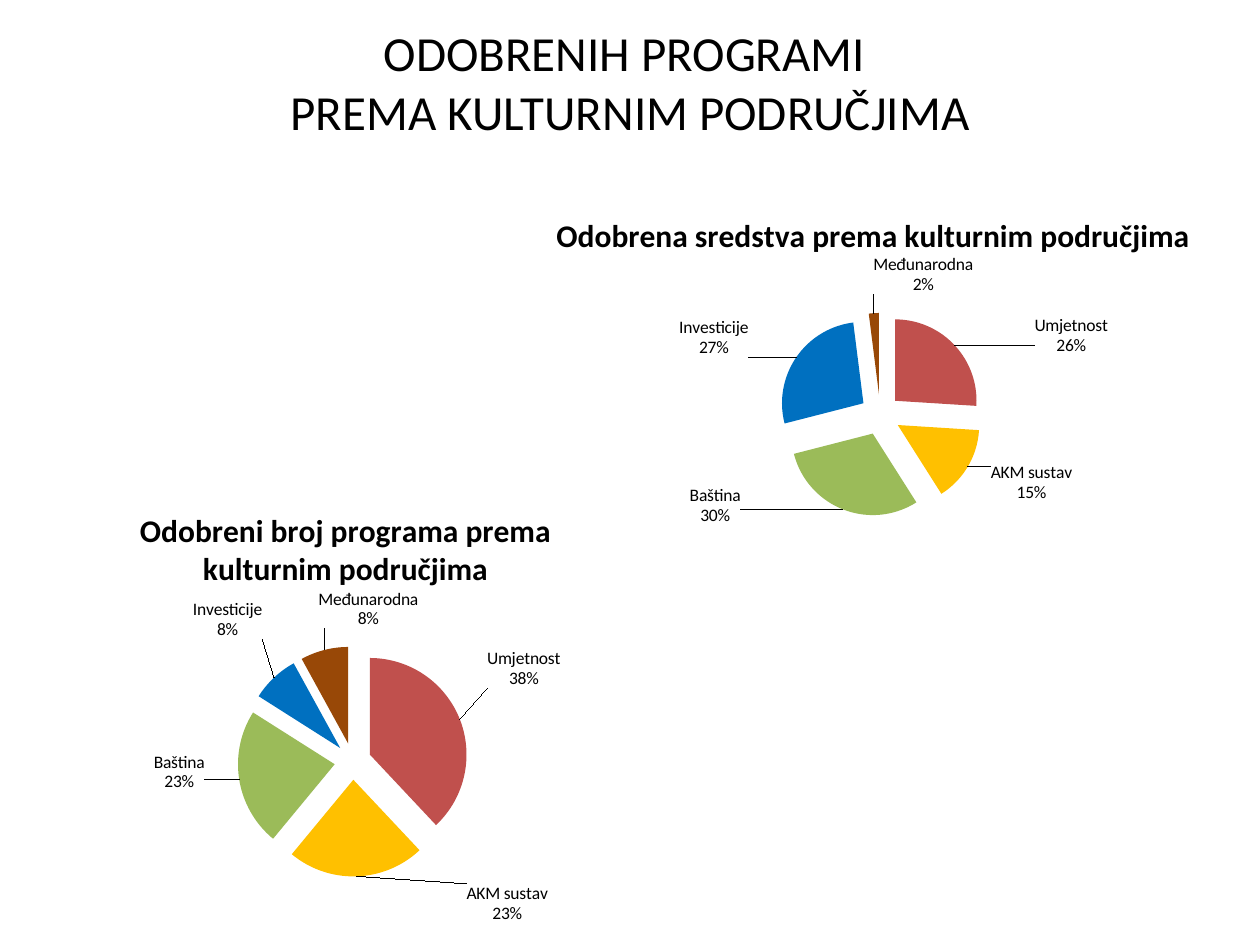
import pptx
import pptx.chart.data
import pptx.dml.color
import pptx.enum.chart
import pptx.enum.text
import pptx.oxml
import pptx.oxml.ns
import pptx.util

RGBColor = pptx.dml.color.RGBColor
BLACK = RGBColor(0x00, 0x00, 0x00)
RED = RGBColor(0xC0, 0x50, 0x4D)
YELLOW = RGBColor(0xFF, 0xC0, 0x00)
GREEN = RGBColor(0x9B, 0xBB, 0x59)
BLUE = RGBColor(0x00, 0x70, 0xC0)
BROWN = RGBColor(0x98, 0x48, 0x07)
FONT = "Calibri"
NAMESPACE = pptx.oxml.ns.nsdecls("c")

AREAS = {"Umjetnost": RED, "AKM sustav": YELLOW, "Baština": GREEN,
         "Investicije": BLUE, "Međunarodna": BROWN}

# Frames are shares of the slide; plots, titles and label shifts are shares of the chart
CHARTS = [
    {"title": "Odobrena sredstva prema kulturnim područjima",
     "frame": (0.358, 0.196, 0.659, 0.399), "plot": (0.168, 0.339, 0.698, 0.54),
     "title_at": (0.12, 0.06), "explosion": 25, "values": (26, 15, 30, 27, 2),
     "shifts": [(0.09, 0.04), (0.02, -0.02), (-0.12, -0.08), (-0.05, 0.01), (0.06, -0.03)]},
    {"title": "Odobreni broj programa prema kulturnim područjima",
     "frame": (-0.002, 0.507, 0.543, 0.499), "plot": (0.226, 0.355, 0.587, 0.488),
     "title_at": (0.2, 0.05), "explosion": 19, "values": (38, 23, 23, 8, 8),
     "shifts": [(0.03, -0.06), (0.22, 0), (-0.04, -0.06), (-0.01, -0.07), (0.14, -0.03)]},
]


def layout_xml(position, edge=True, inner=False):
    """Manual chart layout: x, y and optionally width, height."""
    target = '<c:layoutTarget val="inner"/>' if inner else ""
    modes = '<c:xMode val="edge"/><c:yMode val="edge"/>' if edge else ""
    values = "".join(f'<c:{name} val="{value}"/>' for name, value in zip("xywh", position))
    return (f"<c:layout {NAMESPACE}><c:manualLayout>{target}{modes}{values}"
            "</c:manualLayout></c:layout>")


def style_font(font, size, bold=False):
    font.name = FONT
    font.size = pptx.util.Pt(size)
    font.bold = bold
    font.color.rgb = BLACK


presentation = pptx.Presentation()
presentation.slide_width = pptx.util.Inches(10)
presentation.slide_height = pptx.util.Inches(7.5)
width, height = presentation.slide_width, presentation.slide_height
slide = presentation.slides.add_slide(presentation.slide_layouts[6])

# Heading
heading = slide.shapes.add_textbox(0, int(height * 0.017), width, int(height * 0.139))
heading.text_frame.word_wrap = True
heading.text_frame.text = "ODOBRENIH PROGRAMI \nPREMA KULTURNIM PODRUČJIMA"
for paragraph in heading.text_frame.paragraphs:
    paragraph.alignment = pptx.enum.text.PP_ALIGN.CENTER
    style_font(paragraph.runs[0].font, 28)

# Two exploded pies
for details in CHARTS:
    data = pptx.chart.data.CategoryChartData()
    data.categories = list(AREAS)
    data.add_series("Series 1", details["values"])
    frame = [int(share * side) for share, side in zip(details["frame"], (width, height) * 2)]
    chart = slide.shapes.add_chart(pptx.enum.chart.XL_CHART_TYPE.PIE, *frame, data).chart
    style_font(chart.font, 10)
    chart.has_legend = False

    # Title
    chart.has_title = True
    title_frame = chart.chart_title.text_frame
    title_frame.text = details["title"]
    style_font(title_frame.paragraphs[0].runs[0].font, 18, bold=True)
    title = chart.chart_title._element
    for layout in title.xpath("c:layout"):
        title.remove(layout)
    title.xpath("c:tx")[0].addnext(pptx.oxml.parse_xml(layout_xml(details["title_at"])))

    # Plot area
    plot_area = chart._chartSpace.xpath("c:chart/c:plotArea")[0]
    for layout in plot_area.xpath("c:layout"):
        plot_area.remove(layout)
    plot_area.insert(0, pptx.oxml.parse_xml(layout_xml(details["plot"], inner=True)))

    # Slices
    plot = chart.plots[0]
    plot.vary_by_categories = True
    series = plot.series[0]
    explosion = f'<c:explosion {NAMESPACE} val="{details["explosion"]}"/>'
    for index, color in enumerate(AREAS.values()):
        fill = series.points[index].format.fill
        fill.solid()
        fill.fore_color.rgb = color
    for point in series._element.xpath("c:dPt"):
        point.xpath("c:spPr")[0].addprevious(pptx.oxml.parse_xml(explosion))
    series._element.xpath("c:dPt")[0].addprevious(pptx.oxml.parse_xml(explosion))

    # Labels, each moved away from its slice
    labels = series.data_labels
    style_font(labels.font, 10)
    labels.show_value = False
    labels.show_category_name = True
    labels.show_percentage = True
    labels.number_format = "0%"
    labels.number_format_is_linked = False
    labels.position = pptx.enum.chart.XL_LABEL_POSITION.OUTSIDE_END
    for index, shift in enumerate(details["shifts"]):
        label = pptx.oxml.parse_xml(
            f'<c:dLbl {NAMESPACE}><c:idx val="{index}"/>{layout_xml(shift, edge=False)}'
            '<c:numFmt formatCode="0%" sourceLinked="0"/><c:dLblPos val="outEnd"/>'
            '<c:showLegendKey val="0"/><c:showVal val="0"/><c:showCatName val="1"/>'
            '<c:showSerName val="0"/><c:showPercent val="1"/><c:showBubbleSize val="0"/>'
            "<c:separator>\n</c:separator></c:dLbl>")
        labels._element.insert(index, label)

presentation.save("out.pptx")
